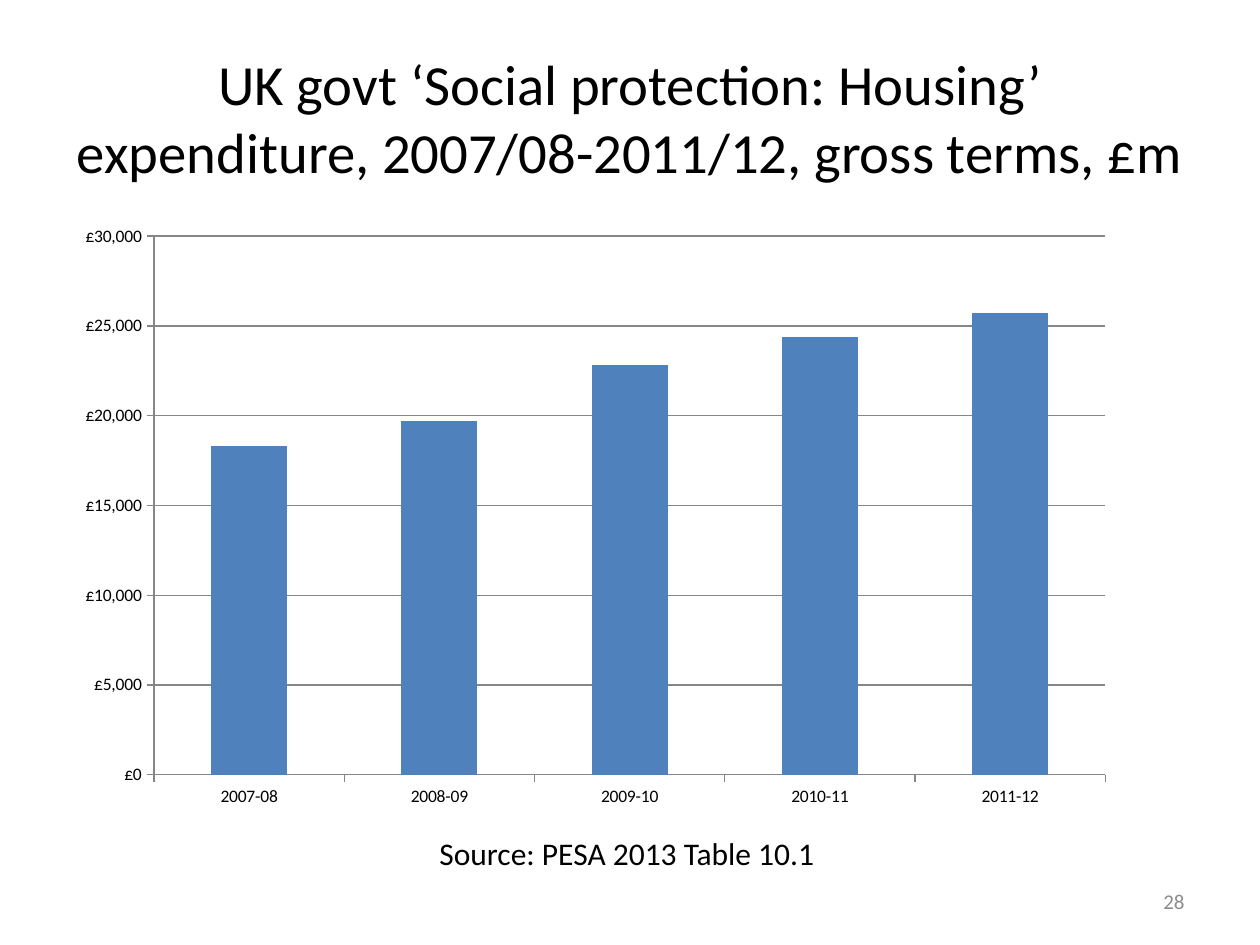
import pptx
import pptx.chart.data
import pptx.dml.color
import pptx.enum.chart
import pptx.enum.text
import pptx.util

Pt = pptx.util.Pt
ALIGN = pptx.enum.text.PP_ALIGN
ANCHOR = pptx.enum.text.MSO_ANCHOR
FONT = "Calibri"

# Content: text, box (left, top, width, height), size, colour, alignment, wrap
TEXTS = [
    ("UK govt ‘Social protection: Housing’ expenditure, 2007/08-2011/12, gross terms, £m",
     (36, 21.6, 648, 90), 32.4, "000000", ALIGN.CENTER, True),
    ("Source: PESA 2013 Table 10.1",
     (244, 473, 231, 29), 18, "000000", ALIGN.LEFT, False),
    ("28", (516, 500.5, 168, 28.8), 12, "8C8C8C", ALIGN.RIGHT, True),
]
SPENDING = {
    "2007-08": 18300,
    "2008-09": 19700,
    "2009-10": 22800,
    "2010-11": 24400,
    "2011-12": 25700,
}
CHART_BOX = (36.7, 122.4, 607, 345.6)


def colour(value):
    return pptx.dml.color.RGBColor.from_string(value)


def add_text(slide, text, box, size, text_colour, align, wrap):
    frame = slide.shapes.add_textbox(*map(Pt, box)).text_frame
    frame.word_wrap = wrap
    frame.vertical_anchor = ANCHOR.MIDDLE
    paragraph = frame.paragraphs[0]
    paragraph.alignment = align
    run = paragraph.add_run()
    run.text = text
    run.font.name = FONT
    run.font.size = Pt(size)
    run.font.color.rgb = colour(text_colour)


def add_spending_chart(slide):
    spending = pptx.chart.data.CategoryChartData(number_format='"£"#,##0')
    spending.categories = list(SPENDING)
    spending.add_series("Series 1", list(SPENDING.values()))
    chart = slide.shapes.add_chart(
        pptx.enum.chart.XL_CHART_TYPE.COLUMN_CLUSTERED,
        *map(Pt, CHART_BOX), spending).chart
    chart.has_legend = False
    chart.has_title = False
    chart.font.name = FONT
    chart.font.size = Pt(10)
    chart.font.color.rgb = colour("000000")

    # Columns
    columns = chart.plots[0]
    columns.gap_width = 150
    columns.vary_by_categories = False
    fill = columns.series[0].format.fill
    fill.solid()
    fill.fore_color.rgb = colour("4F81BD")

    # Axes and gridlines
    amounts = chart.value_axis
    amounts.minimum_scale = 0
    amounts.maximum_scale = 30000
    amounts.major_unit = 5000
    amounts.has_major_gridlines = True
    amounts.tick_labels.number_format = '"£"#,##0'
    amounts.tick_labels.number_format_is_linked = False
    for axis in (chart.category_axis, amounts):
        axis.major_tick_mark = pptx.enum.chart.XL_TICK_MARK.OUTSIDE
    for part in (chart.category_axis, amounts, amounts.major_gridlines):
        part.format.line.color.rgb = colour("868686")
        part.format.line.width = Pt(0.75)


def main():
    deck = pptx.Presentation()
    deck.slide_width, deck.slide_height = Pt(720), Pt(540)
    slide = deck.slides.add_slide(deck.slide_layouts[6])
    add_spending_chart(slide)
    for text in TEXTS:
        add_text(slide, *text)
    deck.save("out.pptx")


if __name__ == "__main__":
    main()
